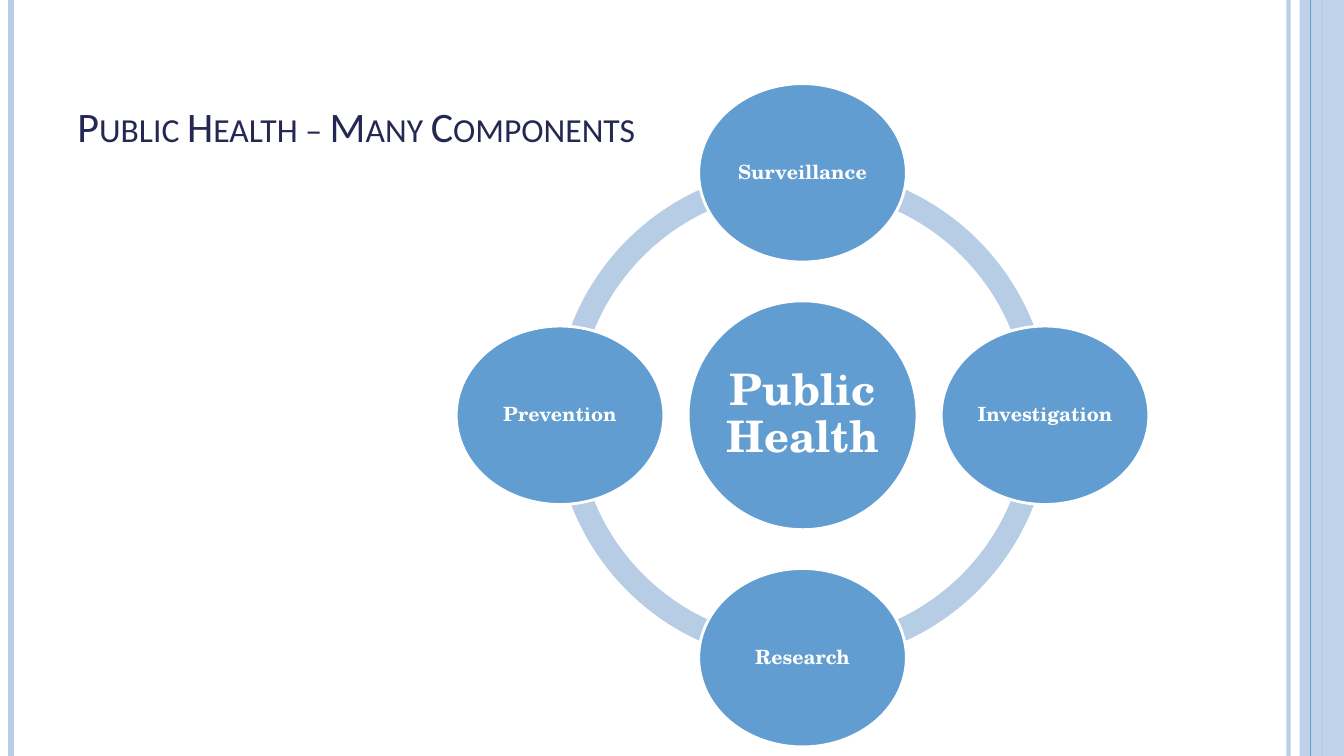
"""Builds a slide with a ring of four public health components around a hub."""
import math

import lxml.etree
import pptx
import pptx.dml.color
import pptx.enum.shapes
import pptx.enum.text
import pptx.oxml.ns
import pptx.util

Inches = pptx.util.Inches
Pt = pptx.util.Pt
SHAPE = pptx.enum.shapes.MSO_SHAPE
ANCHOR = pptx.enum.text.MSO_ANCHOR
qn = pptx.oxml.ns.qn

PALE_BLUE = pptx.dml.color.RGBColor(0xB7, 0xCC, 0xE5)
BLUE = pptx.dml.color.RGBColor(0x62, 0x9D, 0xD1)
NAVY = pptx.dml.color.RGBColor(0x24, 0x28, 0x52)
WHITE = pptx.dml.color.RGBColor(0xFF, 0xFF, 0xFF)

PAGE_WIDTH, PAGE_HEIGHT = 13.33, 7.5
CENTER_X, CENTER_Y = 7.96, 4.12
RING_SIZE = 4.92
ORBIT = 2.405


def set_opacity(shape, percent):
    color = shape._element.spPr.find(".//" + qn("a:srgbClr"))
    lxml.etree.SubElement(color, qn("a:alpha"), val=str(percent * 1000))


def add_centered(kind, x, y, width, height, color):
    shape = page.shapes.add_shape(
        kind, Inches(x - width / 2), Inches(y - height / 2), Inches(width), Inches(height))
    shape.shadow.inherit = False
    shape.fill.solid()
    shape.fill.fore_color.rgb = color
    shape.line.fill.background()
    return shape


deck = pptx.Presentation()
deck.slide_width = Inches(PAGE_WIDTH)
deck.slide_height = Inches(PAGE_HEIGHT)
page = deck.slides.add_slide(deck.slide_layouts[6])

band = add_centered(SHAPE.RECTANGLE, 13.11, PAGE_HEIGHT / 2, 0.44, PAGE_HEIGHT, PALE_BLUE)
set_opacity(band, 87)

for x, color, weight, opacity in [
    (12.78, PALE_BLUE, 3, 93),
    (0.11, PALE_BLUE, 4.5, 100),
    (13.11, PALE_BLUE, 1.5, 100),
    (13, BLUE, 0.75, 100),
]:
    stripe = page.shapes.add_connector(
        pptx.enum.shapes.MSO_CONNECTOR.STRAIGHT,
        Inches(x), Inches(0), Inches(x), Inches(PAGE_HEIGHT))
    stripe.line.color.rgb = color
    stripe.line.width = Pt(weight)
    if opacity < 100:
        set_opacity(stripe, opacity)
    lxml.etree.SubElement(stripe._element.spPr, qn("a:effectLst"))

title = page.shapes.add_textbox(Inches(0.67), Inches(0.3), Inches(10.89), Inches(1.25))
title.text_frame.word_wrap = True
title.text_frame.vertical_anchor = ANCHOR.BOTTOM
span = title.text_frame.paragraphs[0].add_run()
span.text = "Public Health – Many Components"
span.font.color.rgb = NAVY
for name, value in {"name": "Calibri", "size": Pt(30)}.items():
    setattr(span.font, name, value)
span._r.get_or_add_rPr().set("cap", "small")

for start in (180, 90, 0, 270):
    arc = add_centered(SHAPE.BLOCK_ARC, CENTER_X, CENTER_Y, RING_SIZE, RING_SIZE, PALE_BLUE)
    arc.adjustments[0] = start * 0.6
    arc.adjustments[1] = (start + 90) % 360 * 0.6
    arc.adjustments[2] = 0.046

circles = [("Public Health", CENTER_X, CENTER_Y, 2.27, 2.27, 31, 0.04)]
for index, label in enumerate(["Surveillance", "Investigation", "Research", "Prevention"]):
    angle = math.radians(90 * index - 90)
    circles.append((label, CENTER_X + ORBIT * math.cos(angle),
                    CENTER_Y + ORBIT * math.sin(angle), 2.06, 1.77, 14, 0.02))

for label, x, y, width, height, size, inset in circles:
    circle = add_centered(SHAPE.OVAL, x, y, width, height, BLUE)
    circle.line.color.rgb = WHITE
    circle.line.width = Pt(2)
    frame = circle.text_frame
    frame_format = {"word_wrap": True, "vertical_anchor": ANCHOR.MIDDLE}
    for side in ("left", "right", "top", "bottom"):
        frame_format["margin_" + side] = Inches(inset)
    for name, value in frame_format.items():
        setattr(frame, name, value)
    para = frame.paragraphs[0]
    para.alignment = pptx.enum.text.PP_ALIGN.CENTER
    para.line_spacing = 0.9
    span = para.add_run()
    span.text = label
    span.font.color.rgb = WHITE
    for name, value in {"name": "TeX Gyre Schola", "size": Pt(size), "bold": True}.items():
        setattr(span.font, name, value)

deck.save("out.pptx")
